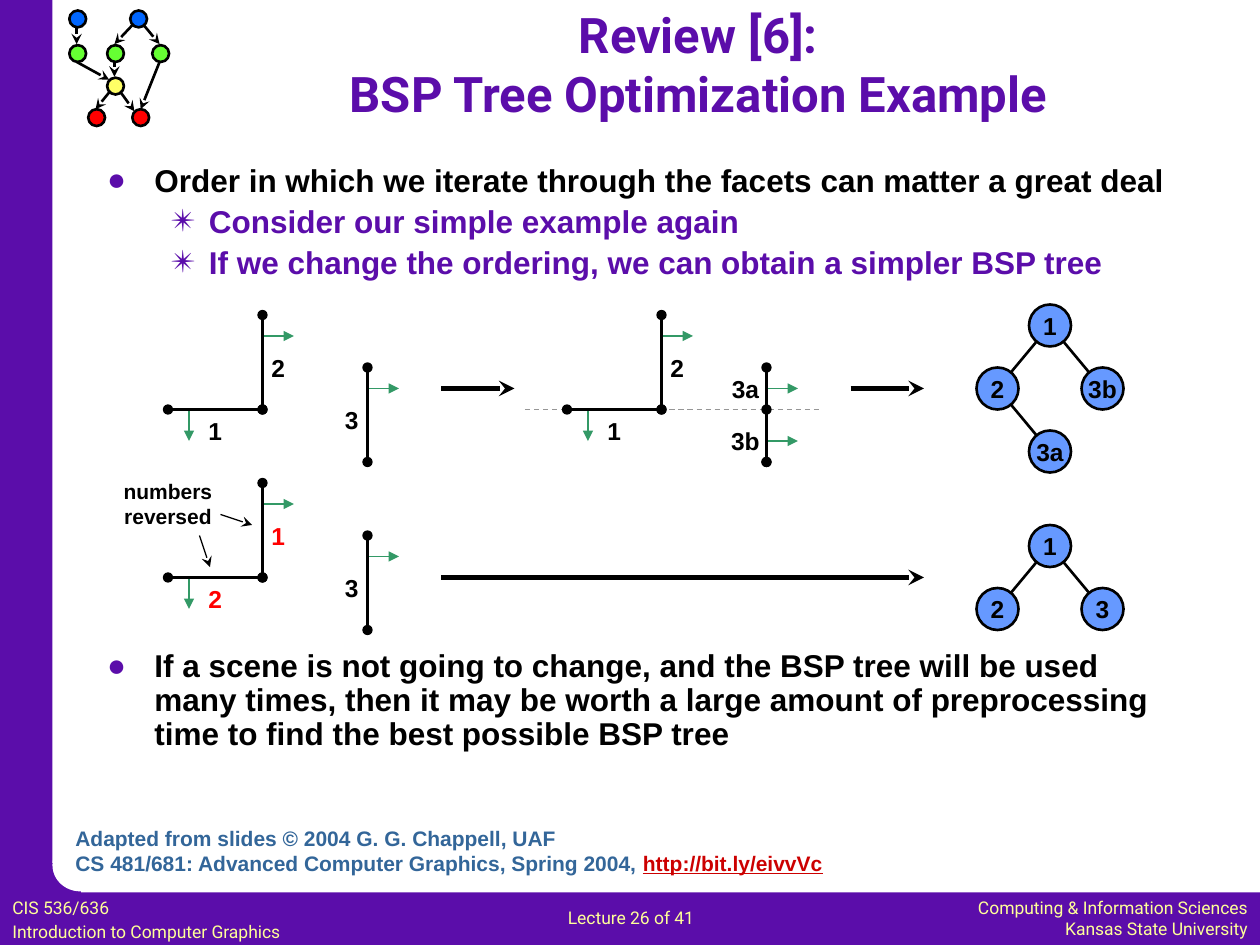
import dataclasses

import pptx
import pptx.dml.color
import pptx.enum.dml
import pptx.enum.shapes
import pptx.enum.text
import pptx.oxml.ns
import pptx.util
from lxml import etree

PX = 7620  # EMU per px, 120 px to the inch
ALIGN = pptx.enum.text.PP_ALIGN
ANCHOR = pptx.enum.text.MSO_ANCHOR
SHAPE = pptx.enum.shapes.MSO_SHAPE


@dataclasses.dataclass(frozen=True)
class Theme:
    purple: str = "5B0DAA"
    white: str = "FFFFFF"
    black: str = "000000"
    red: str = "FF0000"
    footer: str = "FFFF99"
    normal: str = "339966"
    divider: str = "969696"
    node: str = "6699FF"
    credit: str = "336699"
    link: str = "CC0000"
    root_dot: str = "0066FF"
    middle_dot: str = "66FF33"
    join_dot: str = "FFFF66"
    heading_font: str = "Roboto"
    text_font: str = "Arial"
    title_size: int = 28
    body_size: int = 18
    label_size: int = 14
    note_size: int = 12
    footer_size: int = 10


THEME = Theme()


def style(size, color, name=THEME.text_font, bold=True):
    return {"size": pptx.util.Pt(size), "name": name, "bold": bold, "color": color}


TITLE = style(THEME.title_size, THEME.purple, THEME.heading_font)
FOOTER = style(THEME.footer_size, THEME.footer, THEME.heading_font, False)
LABEL = style(THEME.label_size, THEME.black)
NOTE = style(THEME.note_size, THEME.black)
CREDIT = style(THEME.note_size, THEME.credit)


def rgb(color):
    return pptx.dml.color.RGBColor.from_string(color)


def set_values(target, values):
    for name, value in values.items():
        if name == "color":
            target.color.rgb = rgb(value)
        else:
            setattr(target, name, value)


def place(shape, left, top, width, height):
    set_values(shape, {"left": left * PX, "top": top * PX,
                       "width": width * PX, "height": height * PX})


def write(text_frame, lines, font, align=ALIGN.LEFT, gap=0, **frame):
    """Write one paragraph per line, with a gap in points between them."""
    set_values(text_frame, {"word_wrap": True, **frame})
    for index, line in enumerate(lines):
        paragraph = text_frame.paragraphs[0] if index == 0 else text_frame.add_paragraph()
        paragraph.text = line
        set_values(paragraph, {"alignment": align,
                               "space_before": pptx.util.Pt(gap if index else 0)})
        set_values(paragraph.font, font)


def add_text(slide, box, lines, font, **options):
    shape = slide.shapes.add_textbox(*(length * PX for length in box))
    write(shape.text_frame, lines, font, **options)
    return shape


def add_shape(slide, kind, box, fill, outline=None):
    shape = slide.shapes.add_shape(kind, *(length * PX for length in box))
    shape.shadow.inherit = False
    shape.fill.solid()
    shape.fill.fore_color.rgb = rgb(fill)
    if outline:
        set_values(shape.line, {"color": outline, "width": pptx.util.Pt(1.5)})
    else:
        shape.line.fill.background()
    return shape


def add_line(slide, start, end, color=THEME.black, width=1.5, head=None, tail=None, dash=None):
    line = slide.shapes.add_connector(
        pptx.enum.shapes.MSO_CONNECTOR.STRAIGHT, *(length * PX for length in (*start, *end)))
    set_values(line.line, {"color": color, "width": pptx.util.Pt(width)})
    if dash:
        line.line.dash_style = dash
    outline = line.line._get_or_add_ln()
    for tag, kind in (("a:headEnd", head), ("a:tailEnd", tail)):
        if kind:
            etree.SubElement(outline, pptx.oxml.ns.qn(tag), type=kind)
    etree.SubElement(line._element.spPr, pptx.oxml.ns.qn("a:effectLst"))


def add_frame(slide):
    """Purple side and bottom bars with a rounded inner corner."""
    for box in ((0, 850, 1200, 50), (0, 0, 50, 900), (24, 822, 53, 53)):
        add_shape(slide, SHAPE.RECTANGLE, box, THEME.purple)
    add_shape(slide, SHAPE.OVAL, (50, 799, 53, 50), THEME.white)


def add_network(slide):
    """Small graph in the top left corner."""
    dots = ((66, 43, THEME.middle_dot), (66, 10, THEME.root_dot),
            (102, 43, THEME.middle_dot), (124, 10, THEME.root_dot),
            (145, 43, THEME.middle_dot), (102, 74, THEME.join_dot),
            (84, 104, THEME.red), (126, 104, THEME.red))
    for left, top, color in dots:
        add_shape(slide, SHAPE.OVAL, (left, top, 16, 16), color, THEME.black)
    edges = (((73, 26), (73, 42)), ((126, 24), (109, 42)), ((137, 24), (152, 42)),
             ((73, 59), (104, 76)), ((109, 59), (109, 73)), ((152, 59), (134, 104)),
             ((115, 88), (128, 106)), ((104, 88), (91, 104)))
    for start, end in edges:
        add_line(slide, start, end, tail="stealth")


def add_bullet(paragraph, character, indent, hanging):
    properties = paragraph._p.get_or_add_pPr()
    properties.set("marL", str(indent * PX))
    properties.set("indent", str(-hanging * PX))
    color = etree.SubElement(properties, pptx.oxml.ns.qn("a:buClr"))
    etree.SubElement(color, pptx.oxml.ns.qn("a:srgbClr"), val=THEME.purple)
    etree.SubElement(properties, pptx.oxml.ns.qn("a:buChar"), char=character)


def fill_body(body, items):
    place(body, 90, 151, 1043, 620)
    frame = body.text_frame
    set_values(frame, {"word_wrap": True, "auto_size": pptx.enum.text.MSO_AUTO_SIZE.NONE,
                       "vertical_anchor": ANCHOR.TOP})
    levels = (("●", 45, 45, THEME.black), ("✴", 97, 37, THEME.purple))
    for index, (level, gap, text) in enumerate(items):
        paragraph = frame.paragraphs[0] if index == 0 else frame.add_paragraph()
        character, indent, hanging, color = levels[level]
        paragraph.text = text
        add_bullet(paragraph, character, indent, hanging)
        set_values(paragraph, {"level": level, "alignment": ALIGN.LEFT, "line_spacing": 0.9,
                               "space_before": pptx.util.Pt(gap)})
        set_values(paragraph.font, style(THEME.body_size, color))


def add_scene(slide, left, top, labels, split=False):
    """Facets with their normals; a split scene also shows the dividing line."""
    def at(x, y):
        return left + x, top + y

    normals = [((20, 90), (20, 120)), ((90, 20), (120, 20)), ((190, 70), (220, 70))]
    facets = [((0, 90), (90, 90)), ((90, 0), (90, 90)), ((190, 50), (190, 140))]
    if split:
        normals.append(((190, 120), (220, 120)))
        facets.append(((190, 90), (190, 140)))
        add_line(slide, at(-40, 90), at(240, 90), THEME.divider, 0.75,
                 dash=pptx.enum.dml.MSO_LINE.DASH)
    for start, end in normals:
        add_line(slide, at(*start), at(*end), THEME.normal, 0.75, tail="triangle")
    for start, end in facets:
        add_line(slide, at(*start), at(*end), head="oval", tail="oval")
    for text, x, y, width, color in labels:
        add_text(slide, (*at(x, y), width, 40), [text], {**LABEL, "color": color},
                 align=ALIGN.CENTER)


def add_tree(slide, nodes, edges):
    """Nodes are name: centre; edges are pairs of names."""
    for parent, child in edges:
        add_line(slide, nodes[parent], nodes[child])
    for name, (x, y) in nodes.items():
        node = add_shape(slide, SHAPE.OVAL, (x - 20, y - 20, 40, 40), THEME.node, THEME.black)
        write(node.text_frame, [name], LABEL, align=ALIGN.CENTER, word_wrap=False,
              vertical_anchor=ANCHOR.MIDDLE, margin_left=0, margin_right=0)


def main():
    presentation = pptx.Presentation()
    set_values(presentation, {"slide_width": 1200 * PX, "slide_height": 900 * PX})
    slide = presentation.slides.add_slide(presentation.slide_layouts[1])
    add_frame(slide)
    add_network(slide)

    # Title and bullets; the wide gap leaves room for the diagrams
    title, body = slide.placeholders
    place(title, 150, 10, 1030, 100)
    write(title.text_frame, ["Review [6]:", "BSP Tree Optimization Example"], TITLE,
          align=ALIGN.CENTER, vertical_anchor=ANCHOR.MIDDLE,
          auto_size=pptx.enum.text.MSO_AUTO_SIZE.NONE)
    fill_body(body, (
        (0, 0, "Order in which we iterate through the facets can matter a great deal"),
        (1, 4, "Consider our simple example again"),
        (1, 4, "If we change the ordering, we can obtain a simpler BSP tree"),
        (0, 211, "If a scene is not going to change, and the BSP tree will be used many times, "
                 "then it may be worth a large amount of preprocessing time to find the best "
                 "possible BSP tree")))

    # Scenes
    def facet_labels(first, second, color):
        return [(first, 20, 90, 50, color), (second, 80, 30, 50, color)]

    whole = ("3", 150, 80, 50, THEME.black)
    halves = [("3a", 140, 50, 60, THEME.black), ("3b", 140, 100, 60, THEME.black)]
    original_order = facet_labels("1", "2", THEME.black)
    add_scene(slide, 160, 300, original_order + [whole])
    add_scene(slide, 540, 300, original_order + halves, split=True)
    add_scene(slide, 160, 460, facet_labels("2", "1", THEME.red) + [whole])

    # Trees
    add_tree(slide, {"1": (1000, 310), "2": (950, 370), "3b": (1050, 370), "3a": (1000, 430)},
             ("1", "2") and (("1", "2"), ("1", "3b"), ("2", "3a")))
    add_tree(slide, {"1": (1000, 520), "2": (950, 580), "3": (1050, 580)},
             (("1", "2"), ("1", "3")))

    # Step arrows and the note on the reversed numbers
    for start, end, y in ((420, 490, 370), (810, 880, 370), (420, 880, 550)):
        add_line(slide, (start, y), (end, y), width=3, tail="stealth")
    for start, end in (((210, 490), (240, 500)), ((190, 510), (200, 540))):
        add_line(slide, start, end, width=0.75, tail="stealth")
    add_text(slide, (100, 450, 120, 60), ["numbers\vreversed"], NOTE, align=ALIGN.CENTER)

    # Credit and footer
    credit = add_text(slide, (60, 780, 780, 60), [
        "Adapted from slides © 2004 G. G. Chappell, UAF",
        "CS 481/681: Advanced Computer Graphics, Spring 2004, "], CREDIT)
    address = credit.text_frame.paragraphs[1].add_run()
    address.text = "http://bit.ly/eivvVc"
    set_values(address.font, {"color": THEME.link, "underline": True})
    add_text(slide, (0, 848, 354, 52), ["CIS 536/636", "Introduction to Computer Graphics"],
             FOOTER, gap=2)
    add_text(slide, (529, 858, 182, 32), ["Lecture 26 of 41"], FOOTER)
    add_text(slide, (862, 848, 338, 52),
             ["Computing & Information Sciences", "Kansas State University"],
             FOOTER, align=ALIGN.RIGHT)
    presentation.save("out.pptx")


if __name__ == "__main__":
    main()
